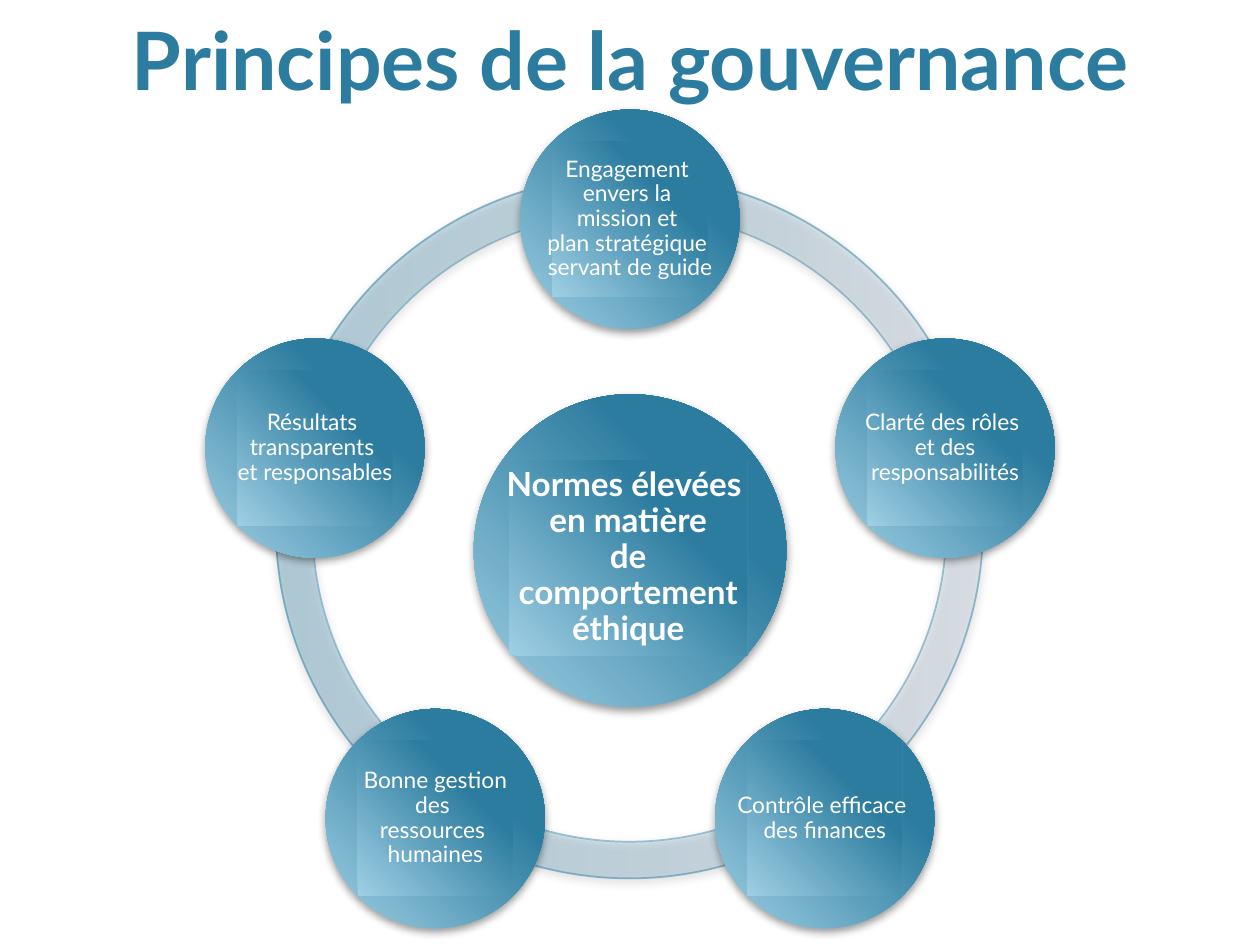
from dataclasses import dataclass
from math import cos, radians, sin, sqrt

from lxml.etree import SubElement
from pptx import Presentation
from pptx.dml.color import RGBColor
from pptx.enum.shapes import MSO_SHAPE
from pptx.enum.text import MSO_ANCHOR, PP_ALIGN
from pptx.oxml.ns import qn
from pptx.util import Pt

BLUE = RGBColor(0x2C, 0x7C, 0x9F)
LIGHT_BLUE = RGBColor(0x9F, 0xCF, 0xE4)
RING_DARK = RGBColor(0x21, 0x80, 0xAA)
RING_MID = RGBColor(0x75, 0xA5, 0xC5)
RING_LIGHT = RGBColor(0xB8, 0xCC, 0xDC)
RING_EDGE = RGBColor(0x28, 0x7A, 0x9E)
WHITE = RGBColor(0xFF, 0xFF, 0xFF)
BLACK = RGBColor(0, 0, 0)
FONT = "Lato"

CX, CY = 360, 314.6  # common centre of the circles
ORBIT = 189.3        # from the centre to each outer circle
OUTER = 125.3        # diameter of an outer circle
DISC_STOPS = [(30, BLUE, 100), (100, LIGHT_BLUE, 100)]
RING_STOPS = [(0, RING_DARK, 27), (69, RING_MID, 27), (100, RING_LIGHT, 27)]


@dataclass
class Disc:
    lines: list[str]
    cx: float
    cy: float
    size: float
    text_box: tuple[float, float, float, float]  # centre offset x, y, width, height
    inset: float
    font: dict


def add_color(parent, color: RGBColor, alpha: int) -> None:
    clr = SubElement(parent, qn("a:srgbClr"), val=str(color))
    if alpha < 100:
        SubElement(clr, qn("a:alpha"), val=str(alpha * 1000))


def set_gradient(sp, stops: list, radial: bool) -> None:
    sp.fill.gradient()
    grad = sp._element.spPr.find(qn("a:gradFill"))
    for child in list(grad):
        grad.remove(child)
    gs_lst = SubElement(grad, qn("a:gsLst"))
    for pos, color, alpha in stops:
        add_color(SubElement(gs_lst, qn("a:gs"), pos=str(pos * 1000)), color, alpha)
    if radial:
        shade = SubElement(grad, qn("a:path"), path="circle")
        SubElement(shade, qn("a:fillToRect"), l="100000", b="100000")
    else:
        SubElement(grad, qn("a:lin"), ang="0", scaled="0")


def add_shadow(sp) -> None:
    effects = sp._element.spPr.find(qn("a:effectLst"))
    shadow = SubElement(effects, qn("a:outerShdw"), blurRad=str(Pt(5)),
                        dist=str(Pt(2)), dir="5400000", rotWithShape="0")
    add_color(shadow, BLACK, 40)


def add_gradient_shape(shapes, kind, cx: float, cy: float, w: float, h: float,
                       stops: list, radial: bool = True):
    sp = shapes.add_shape(kind, Pt(cx - w / 2), Pt(cy - h / 2), Pt(w), Pt(h))
    sp.shadow.inherit = False
    sp.line.fill.background()
    set_gradient(sp, stops, radial)
    return sp


def write_lines(tf, lines: list[str], font: dict, **para_format) -> None:
    for i, line in enumerate(lines):
        p = tf.paragraphs[0] if i == 0 else tf.add_paragraph()
        p.alignment = PP_ALIGN.CENTER
        for name, value in para_format.items():
            setattr(p, name, value)
        r = p.add_run()
        r.text = line
        r.font.color.rgb = font["color"]
        for name in ("name", "size", "bold"):
            setattr(r.font, name, font[name])


def add_disc(s, disc: Disc) -> None:
    shapes = s.shapes.add_group_shape().shapes
    add_shadow(add_gradient_shape(shapes, MSO_SHAPE.OVAL, disc.cx, disc.cy,
                                  disc.size, disc.size, DISC_STOPS))
    dx, dy, w, h = disc.text_box
    sp = add_gradient_shape(shapes, MSO_SHAPE.RECTANGLE, disc.cx + dx, disc.cy + dy,
                            w, h, DISC_STOPS)
    tf = sp.text_frame
    frame = {"word_wrap": False, "vertical_anchor": MSO_ANCHOR.MIDDLE}
    frame |= {f"margin_{side}": Pt(disc.inset) for side in ("left", "top", "right", "bottom")}
    for name, value in frame.items():
        setattr(tf, name, value)
    write_lines(tf, disc.lines, disc.font, line_spacing=0.9)


def add_ring(s) -> None:
    sp = add_gradient_shape(s.shapes, MSO_SHAPE.DONUT, 359.7, 301, 404, 401.8,
                            RING_STOPS, radial=False)
    sp.adjustments[0] = 0.052
    sp.line.color.rgb = RING_EDGE
    sp.line.width = Pt(1)
    edge = sp.line._ln.find(".//" + qn("a:srgbClr"))
    SubElement(edge, qn("a:alpha"), val="43000")
    add_shadow(sp)


def font_format(size: float, color: RGBColor, bold: bool) -> dict:
    return {"name": FONT, "size": Pt(size), "color": color, "bold": bold}


# Outer circles, clockwise from the top
PRINCIPLES = [
    ["Engagement ", "envers la ", "mission et ", "plan stratégique ", "servant de guide"],
    ["Clarté des rôles ", "et des", "responsabilités"],
    ["Contrôle efficace ", "des finances"],
    ["Bonne gestion", "des ", "ressources ", "humaines"],
    ["Résultats ", "transparents ", "et responsables"],
]
CORE = ["Normes élevées ", "en matière", "de", "comportement", "éthique"]


def main() -> None:
    prs = Presentation()
    prs.slide_width, prs.slide_height = Pt(720), Pt(540)
    s = prs.slides.add_slide(prs.slide_layouts[6])

    # Central circle, then the ring
    add_disc(s, Disc(CORE, CX, CY, 178.6, (-1, 4.3, 136, 111), 2,
                     font_format(19, WHITE, True)))
    add_ring(s)

    # Principles evenly spaced around the centre
    side = OUTER / sqrt(2)
    for i, lines in enumerate(PRINCIPLES):
        angle = radians(360 / len(PRINCIPLES) * i)
        add_disc(s, Disc(lines, CX + ORBIT * sin(angle), CY - ORBIT * cos(angle), OUTER,
                         (0, 0, side, side), 0, font_format(13, WHITE, False)))

    # Title
    tf = s.shapes.add_textbox(Pt(0), Pt(2), Pt(720), Pt(77)).text_frame
    tf.word_wrap = True
    write_lines(tf, ["Principes de la gouvernance"], font_format(46, BLUE, True))

    prs.save("out.pptx")


if __name__ == "__main__":
    main()
